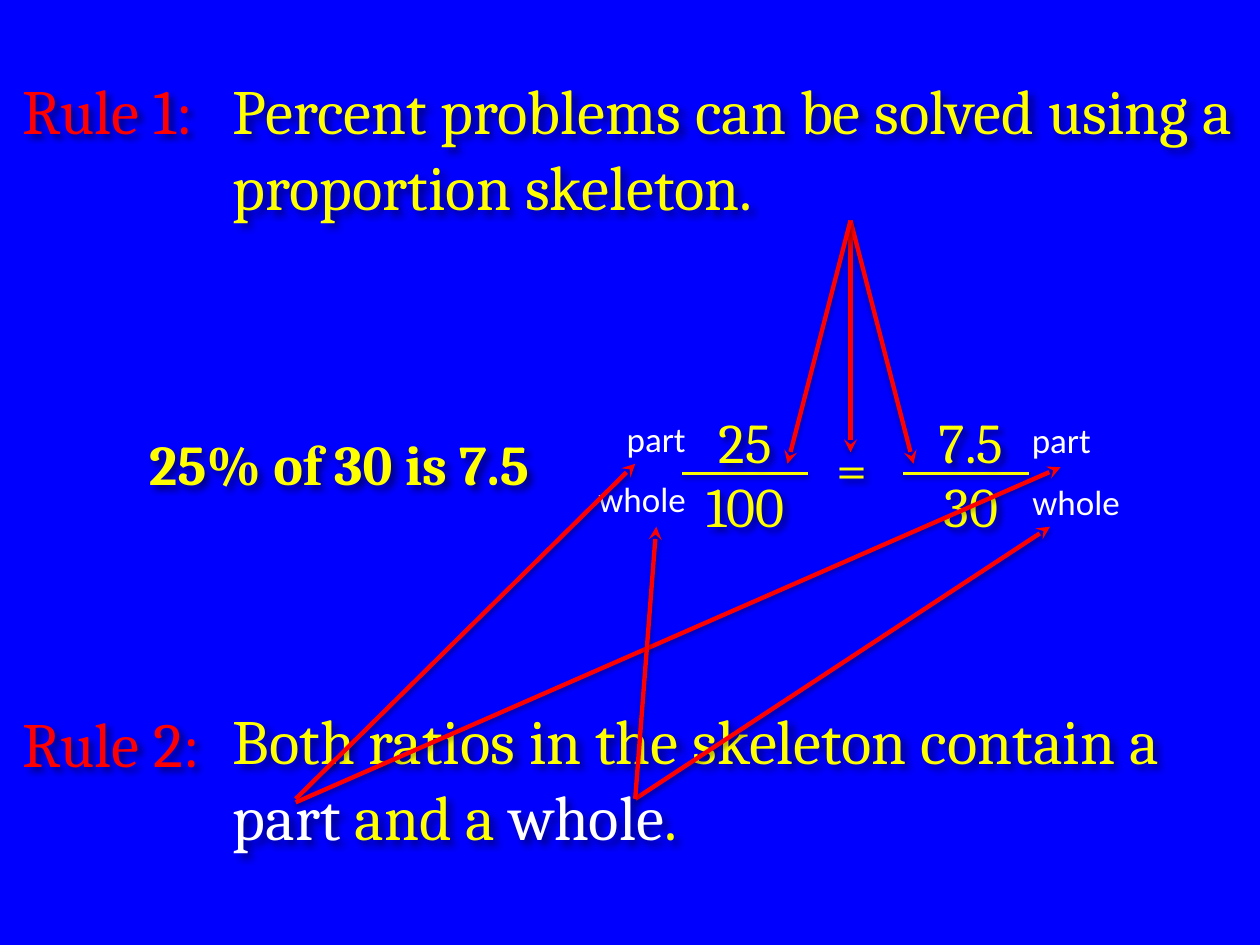
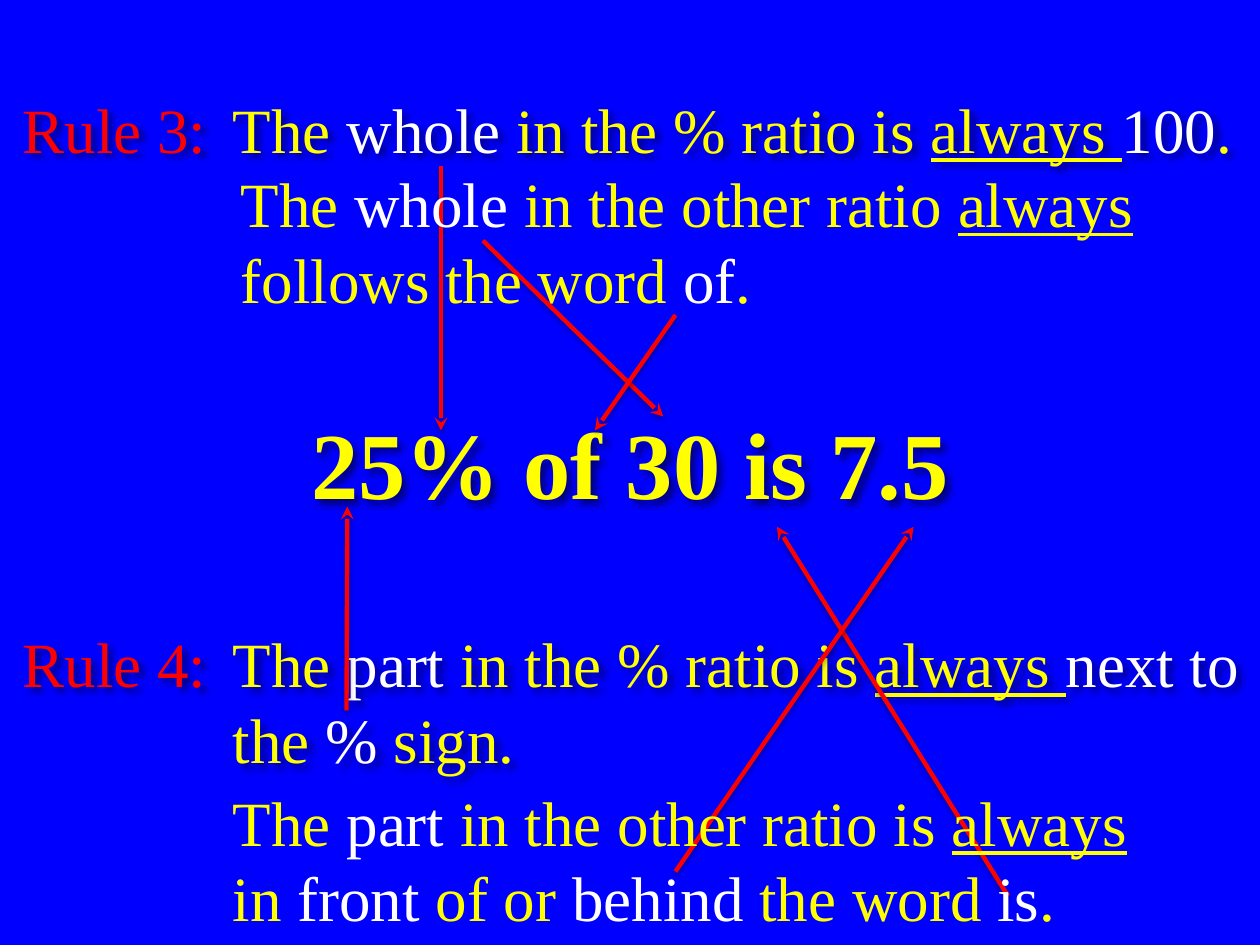
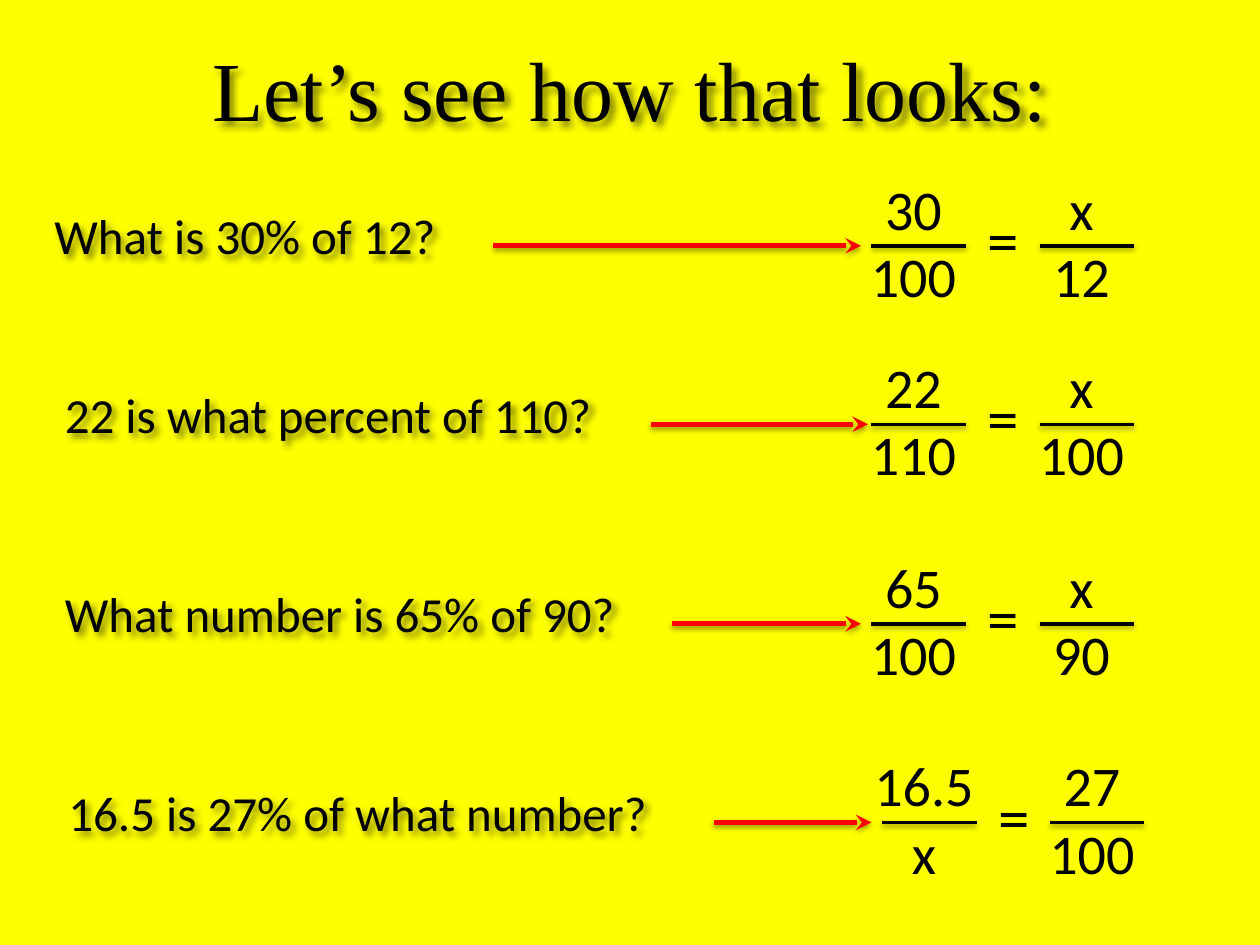
from dataclasses import dataclass

from lxml import etree
from pptx import Presentation
from pptx.dml.color import RGBColor
from pptx.enum import shapes, text
from pptx.oxml import ns
from pptx.util import Pt


@dataclass(frozen=True)
class Theme:
    """Colours, fonts, type sizes and line widths of the deck."""

    blue: str = "0000FF"
    yellow: str = "FFFF00"
    red: str = "FF0000"
    white: str = "FFFFFF"
    black: str = "000000"
    serif: str = "Cambria"
    roman: str = "Times New Roman"
    sans: str = "Calibri"
    headline: int = 54
    title: int = 48
    rule: int = 36
    number: int = 32
    question: int = 28
    label: int = 20
    bar: float = 2
    pointer: float = 2.5
    arrow: float = 3
    text_shadow: tuple = (4, 3, 45, 50)
    line_shadow: tuple = (3.1, 1.6, 90, 38)


THEME = Theme()


def white(words):
    """Mark words as a white run."""
    return words, {"color": THEME.white}


def underlined(words):
    """Mark words as an underlined run."""
    return words, {"underline": True}


def add_shadow(shape, blur, distance, angle, opacity):
    """Give a shape a soft black outer shadow."""
    properties = shape._element.spPr
    effects = etree.SubElement(properties, ns.qn("a:effectLst"))
    shadow = etree.SubElement(
        effects, ns.qn("a:outerShdw"), blurRad=str(int(Pt(blur))), dist=str(int(Pt(distance))),
        dir=str(angle * 60000), algn="tl", rotWithShape="0")
    color = etree.SubElement(shadow, ns.qn("a:srgbClr"), val=THEME.black)
    etree.SubElement(color, ns.qn("a:alpha"), val=str(opacity * 1000))


def place(shape, box):
    """Move and size a shape to a box in points."""
    shape.left, shape.top, shape.width, shape.height = (Pt(length) for length in box)


def write(shape, paragraphs, *, size, font, color, bold=False, centered=False, shadow=False):
    """Fill a shape with paragraphs, each a string or a list of runs."""
    frame = shape.text_frame
    frame.word_wrap = True
    frame.auto_size = text.MSO_AUTO_SIZE.SHAPE_TO_FIT_TEXT
    frame.vertical_anchor = text.MSO_ANCHOR.TOP
    for index, runs in enumerate(paragraphs):
        paragraph = frame.add_paragraph() if index else frame.paragraphs[0]
        paragraph.alignment = text.PP_ALIGN.CENTER if centered else text.PP_ALIGN.LEFT
        for part in [runs] if isinstance(runs, str) else runs:
            words, style = (part, {}) if isinstance(part, str) else part
            run = paragraph.add_run()
            run.text = words
            run.font.size, run.font.name, run.font.bold = Pt(size), font, bold
            run.font.color.rgb = RGBColor.from_string(style.get("color", color))
            run.font.underline = style.get("underline", False)
    if shadow:
        add_shadow(shape, *THEME.text_shadow)


def add_text(slide, box, *paragraphs, **style):
    """Add a text box in the given format."""
    shape = slide.shapes.add_textbox(*(Pt(length) for length in box))
    write(shape, paragraphs, **style)


def add_line(slide, start, end, color, width, arrow=False):
    """Draw a shadowed straight line, with an arrowhead if wanted."""
    line = slide.shapes.add_connector(
        shapes.MSO_CONNECTOR.STRAIGHT, *(Pt(length) for length in (*start, *end)))
    line.line.color.rgb = RGBColor.from_string(color)
    line.line.width = Pt(width)
    if arrow:
        etree.SubElement(line.line._get_or_add_ln(), ns.qn("a:tailEnd"), type="stealth")
    add_shadow(line, *THEME.line_shadow)


def add_pointers(slide, pairs):
    """Draw the red arrows that tie rule words to the example."""
    for start, end in pairs:
        add_line(slide, start, end, THEME.red, THEME.pointer, arrow=True)


def add_slide(presentation, layout, background):
    """Add a slide with a plain background."""
    slide = presentation.slides.add_slide(presentation.slide_layouts.get_by_name(layout))
    slide.background.fill.solid()
    slide.background.fill.fore_color.rgb = RGBColor.from_string(background)
    return slide


def add_rule(slide, box, label, runs, font, drop=0):
    """Place a red rule label and its yellow wording in a box."""
    left, top, width, height = box
    style = {"size": THEME.rule, "font": font, "shadow": True}
    add_text(slide, (left, top + drop, 132, 51), label, color=THEME.red, **style)
    add_text(slide, (left + 120, top, width - 120, height), runs, color=THEME.yellow, **style)


def add_labelled_proportion(slide, box):
    """Place the worked proportion with its part and whole labels in a box."""
    left, top, width, _ = box
    number = {"size": THEME.number, "font": THEME.serif, "color": THEME.yellow,
              "centered": True, "shadow": True}
    label = {"size": THEME.label, "font": THEME.sans, "color": THEME.white, "centered": True}
    columns = ((0, -9, "25", "100"), (width - 72, width - 78, "7.5", "30"))
    for bar, offset, numerator, denominator in columns:
        add_line(slide, (left + bar, top + 41), (left + bar + 72, top + 41),
                 THEME.yellow, THEME.bar)
        add_text(slide, (left + offset, top, 90, 46), numerator, **number)
        add_text(slide, (left + offset, top + 36.5, 90, 46), denominator, **number)
    add_text(slide, (left + 73, top + 14.5, 48, 46), "=", **number)
    labels = (("part", -54, 5.5), ("part", 177.5, 6), ("whole", -62, 40), ("whole", 186, 41.5))
    for words, across, down in labels:
        add_text(slide, (left + across, top + down, 78, 32), words, **label)


def add_proportion(slide, box, fractions):
    """Place two equal fractions in a box."""
    left, top, width, height = box
    style = {"font": THEME.sans, "color": THEME.black, "centered": True}
    for column, fraction in enumerate(fractions):
        x = left + column * width / 2
        add_text(slide, (x, top, width / 2, height), *fraction, size=THEME.number, **style)
        add_line(slide, (x + 24, top + 44.5), (x + 78, top + 44.5), THEME.black, THEME.bar)
    add_text(slide, (left + 72.5, top + 15, 54, 51), "=", size=THEME.rule, **style)


def add_problem(slide, box, question, arrow, proportion_left, fractions):
    """Place a question, its arrow and its proportion in a row."""
    left, top, width, height = box
    add_text(slide, (left, top + 18, width, 41), question, size=THEME.question,
             font=THEME.sans, color=THEME.black, shadow=True)
    add_proportion(slide, (proportion_left, top, 192, height), fractions)
    start, end = arrow
    add_line(slide, (start, top + 44.5), (end, top + 44.5), THEME.red, THEME.arrow, arrow=True)


def build_skeleton_slide(presentation):
    """Build the slide with rules 1 and 2."""
    slide = add_slide(presentation, "Blank", THEME.blue)
    add_text(slide, (78, 242, 270, 46), "25% of 30 is 7.5", size=THEME.number,
             font=THEME.serif, color=THEME.yellow, bold=True, shadow=True)
    add_labelled_proportion(slide, (390, 229.5, 198, 82))
    add_rule(slide, (6, 37.5, 714, 94), "Rule 1:",
             "Percent problems can be solved using a proportion skeleton.", THEME.serif)
    add_rule(slide, (6, 397.5, 714, 94), "Rule 2:",
             ["Both ratios in the skeleton contain a ", white("part "), "and a ",
              white("whole"), "."], THEME.serif, drop=1.5)
    skeleton, whole = (486, 126), (363, 456.5)
    add_pointers(slide, (
        (skeleton, (486, 258.5)), (skeleton, (522, 265)), (skeleton, (450, 265)),
        ((169, 456.5), (363, 265)), ((169, 458.5), (606, 267)),
        (whole, (600, 301)), (whole, (375, 301))))


def build_ratio_slide(presentation):
    """Build the slide with rules 3 and 4."""
    slide = add_slide(presentation, "Blank", THEME.blue)
    add_rule(slide, (6, 48, 714, 51), "Rule 3:",
             ["The ", white("whole "), "in the % ratio is ", underlined("always "),
              white("100"), "."], THEME.roman)
    add_text(slide, (48, 228, 624, 73), "25% of 30 is 7.5", size=THEME.headline,
             font=THEME.roman, color=THEME.yellow, bold=True, centered=True, shadow=True)
    add_rule(slide, (6, 353.5, 714, 94), "Rule 4:",
             ["The ", white("part "), "in the % ratio is ", underlined("always "),
              white("next to "), "the ", white("% "), "sign."], THEME.roman)
    add_pointers(slide, (
        ((252, 95), (252, 246)), ((276, 137.5), (379, 238)), ((386, 180), (340, 246)),
        ((198, 406), (198.5, 289.5)), ((576, 512), (444, 301)), ((386, 498), (522, 301))))
    style = {"size": THEME.rule, "font": THEME.roman, "color": THEME.yellow}
    add_text(slide, (130.5, 90.5, 564, 94),
             ["The ", white("whole "), "in the other ratio ", underlined("always "),
              "follows the word ", white("of"), "."], **style)
    add_text(slide, (126, 444, 540, 94),
             ["The ", white("part "), "in the other ratio is ", underlined("always"), " in ",
              white("front "), "of or ", white("behind "), "the word ", white("is"), "."],
             **style)


def build_problem_slide(presentation):
    """Build the slide that turns four questions into proportions."""
    slide = add_slide(presentation, "Title Only", THEME.yellow)
    title = slide.shapes.title
    place(title, (0, 18, 720, 65.5))
    write(title, ["Let’s see how that looks:"], size=THEME.title, font=THEME.roman,
          color=THEME.black, centered=True, shadow=True)
    problems = (
        ((24, 96, 294, 85), "What is 30% of 12?", (282, 492), 474,
         (("30", "100"), ("x", "12"))),
        ((30, 198, 360, 85), "22 is what percent of 110?", (372, 496), 474,
         (("22", "110"), ("x", "100"))),
        ((30, 312, 378, 85), "What number is 65% of 90?", (384, 492), 474,
         (("65", "100"), ("x", "90"))),
        ((32, 425.5, 400, 85), "16.5 is 27% of what number?", (408, 498), 480,
         (("16.5", "x"), ("27", "100"))),
    )
    for problem in problems:
        add_problem(slide, *problem)


def main():
    """Build and save the deck."""
    presentation = Presentation()
    presentation.slide_width, presentation.slide_height = Pt(720), Pt(540)
    build_skeleton_slide(presentation)
    build_ratio_slide(presentation)
    build_problem_slide(presentation)
    presentation.save("out.pptx")


if __name__ == "__main__":
    main()
